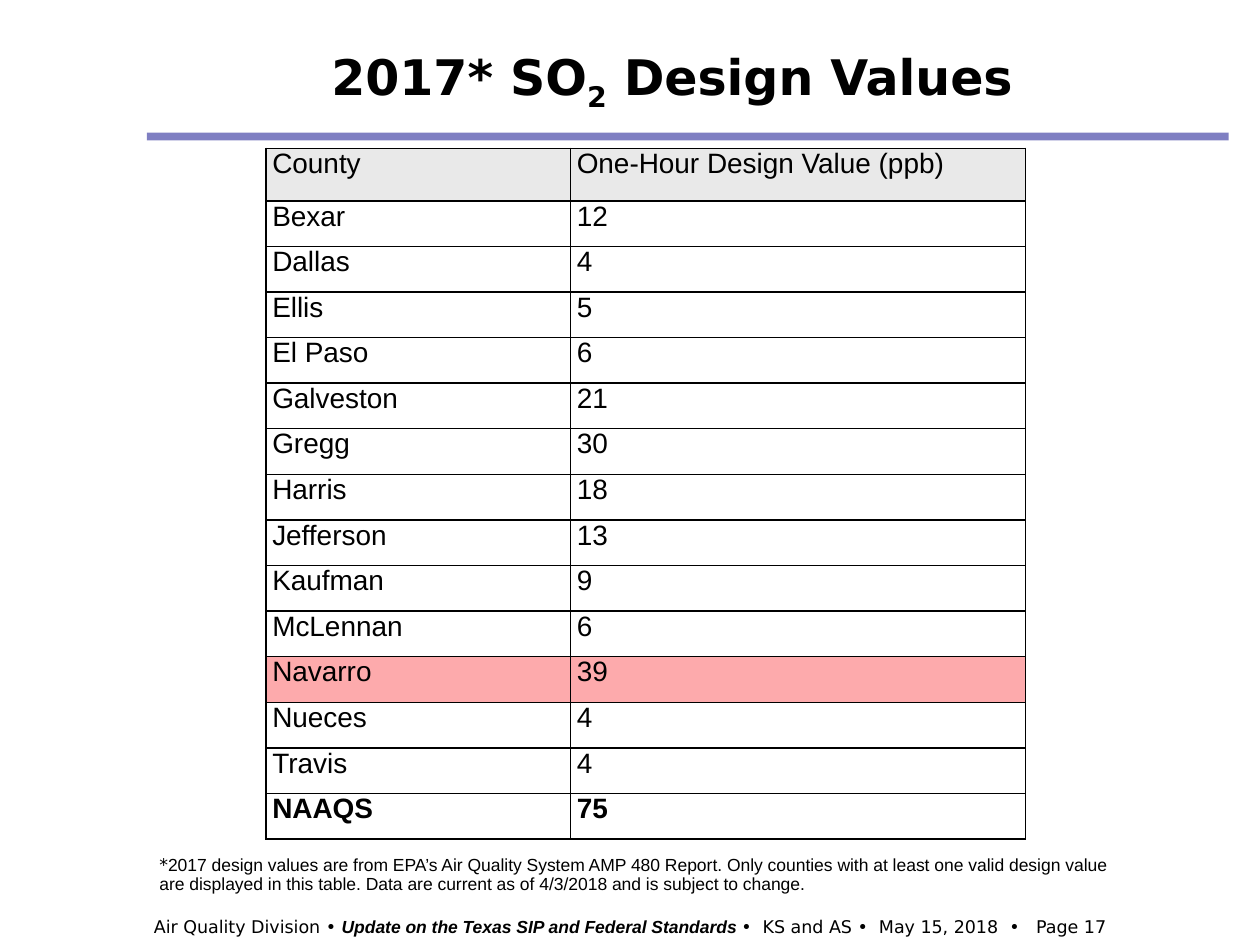
"""Build the slide of 2017 sulfur dioxide design values by county."""
from dataclasses import dataclass

from lxml import etree
from pptx import Presentation
from pptx.dml.color import RGBColor
from pptx.enum import shapes, text
from pptx.oxml import ns
from pptx.util import Pt


@dataclass(frozen=True)
class Theme:
    """Colours, fonts and type sizes of the slide."""
    black: str = "000000"
    white: str = "FFFFFF"
    rule: str = "000086"
    header: str = "E9E9E9"
    highlight: str = "FDAAAC"
    heading_font: str = "DejaVu Sans"
    body_font: str = "Arial"
    title_size: int = 28
    table_size: int = 16
    small_size: int = 10


THEME = Theme()
DESIGN_VALUES = [
    ("County", "One-Hour Design Value (ppb)"),
    ("Bexar", "12"), ("Dallas", "4"), ("Ellis", "5"), ("El Paso", "6"),
    ("Galveston", "21"), ("Gregg", "30"), ("Harris", "18"),
    ("Jefferson", "13"), ("Kaufman", "9"), ("McLennan", "6"),
    ("Navarro", "39"), ("Nueces", "4"), ("Travis", "4"), ("NAAQS", "75"),
]
ROW_FILLS = {"County": THEME.header, "Navarro": THEME.highlight}


def style_font(font, name, size, bold=False, italic=False):
    """Set the typeface, size, weight and colour of a font."""
    font.name, font.size = name, Pt(size)
    font.bold, font.italic = bold, italic
    font.color.rgb = RGBColor.from_string(THEME.black)


def add_runs(paragraph, size, parts):
    """Append styled runs given as (wording, font name, bold, italic)."""
    for wording, name, bold, italic in parts:
        run = paragraph.add_run()
        run.text = wording
        style_font(run.font, name, size, bold, italic)


def add_text_box(slide, left, top, width, height, size, parts):
    """Add a wrapped, centred text box and return its paragraph."""
    text_frame = slide.shapes.add_textbox(
        Pt(left), Pt(top), Pt(width), Pt(height)).text_frame
    text_frame.word_wrap = True
    text_frame.vertical_anchor = text.MSO_ANCHOR.MIDDLE
    paragraph = text_frame.paragraphs[0]
    paragraph.alignment = text.PP_ALIGN.CENTER
    add_runs(paragraph, size, parts)
    return paragraph


def add_title(slide):
    """Add the heading with its subscript."""
    parts = [(wording, THEME.heading_font, True, False)
             for wording in ("2017* SO", "2", " Design Values")]
    paragraph = add_text_box(slide, 114, 12.5, 540, 66, THEME.title_size, parts)
    paragraph.runs[1].font._element.set("baseline", "-25000")


def add_rule(slide):
    """Add the half-transparent rule below the heading."""
    connector = slide.shapes.add_connector(
        shapes.MSO_CONNECTOR.STRAIGHT, Pt(84), Pt(78), Pt(702), Pt(78))
    connector.line.width = Pt(4.5)
    connector.line.color.rgb = RGBColor.from_string(THEME.rule)
    properties = connector._element.spPr
    color = properties.find(".//" + ns.qn("a:srgbClr"))
    etree.SubElement(color, ns.qn("a:alpha"), val="50000")
    etree.SubElement(properties, ns.qn("a:effectLst"))


def add_borders(cell):
    """Draw a one-point line on each side of a cell."""
    properties = cell._tc.get_or_add_tcPr()
    for side in ("lnL", "lnR", "lnT", "lnB"):
        line = etree.SubElement(properties, ns.qn(f"a:{side}"), w=str(Pt(1)))
        fill = etree.SubElement(line, ns.qn("a:solidFill"))
        etree.SubElement(fill, ns.qn("a:srgbClr"), val=THEME.black)


def fill_cell(cell, wording, color, bold):
    """Write and style one table cell."""
    cell.margin_left = cell.margin_right = Pt(3.6)
    cell.margin_top = cell.margin_bottom = 0
    add_borders(cell)
    cell.fill.solid()
    cell.fill.fore_color.rgb = RGBColor.from_string(color)
    cell.text_frame.text = wording
    run = cell.text_frame.paragraphs[0].runs[0]
    style_font(run.font, THEME.body_font, THEME.table_size, bold)


def add_value_table(slide):
    """Add the table of counties and design values."""
    widths, header_height, row_height = (174, 260), 30, 26.07
    height = header_height + row_height * (len(DESIGN_VALUES) - 1)
    table = slide.shapes.add_table(
        len(DESIGN_VALUES), len(widths),
        Pt(152), Pt(84.75), Pt(sum(widths)), Pt(height)).table
    table.first_row = table.horz_banding = False
    for column, width in zip(table.columns, widths):
        column.width = Pt(width)
    for row, values in zip(table.rows, DESIGN_VALUES):
        county = values[0]
        row.height = Pt(header_height if county == "County" else row_height)
        for cell, wording in zip(row.cells, values):
            fill_cell(cell, wording, ROW_FILLS.get(county, THEME.white),
                      county == "NAAQS")


def add_note(slide):
    """Add the white box that explains the asterisk."""
    shape = slide.shapes.add_shape(
        shapes.MSO_SHAPE.RECTANGLE, Pt(84), Pt(486), Pt(570), Pt(29))
    shape.shadow.inherit = False
    shape.fill.solid()
    shape.fill.fore_color.rgb = RGBColor.from_string(THEME.white)
    shape.line.fill.background()
    text_frame = shape.text_frame
    text_frame.word_wrap = True
    text_frame.vertical_anchor = text.MSO_ANCHOR.TOP
    paragraph = text_frame.paragraphs[0]
    paragraph.alignment = text.PP_ALIGN.LEFT
    paragraph.line_spacing = 0.9
    add_runs(paragraph, THEME.small_size, [
        ("*", THEME.heading_font, False, False),
        ("2017 design values are from EPA’s Air Quality System AMP 480 Report. "
         "Only counties with at least one valid design value are displayed in "
         "this table. Data are current as of 4/3/2018 and is subject to change.",
         THEME.body_font, False, False),
    ])


def add_footer(slide):
    """Add the footer line."""
    add_text_box(slide, 0, 520, 720, 19.5, THEME.small_size, [
        ("Air Quality Division • ", THEME.heading_font, False, False),
        ("Update on the Texas SIP and Federal Standards ",
         THEME.body_font, True, True),
        ("•  KS and AS •  May 15, 2018  •   Page 17",
         THEME.heading_font, False, False),
    ])


def main():
    """Create the presentation and save it."""
    presentation = Presentation()
    presentation.slide_width, presentation.slide_height = Pt(720), Pt(540)
    slide = presentation.slides.add_slide(presentation.slide_layouts[6])
    add_rule(slide)
    add_footer(slide)
    add_title(slide)
    add_value_table(slide)
    add_note(slide)
    presentation.save("out.pptx")


if __name__ == "__main__":
    main()
